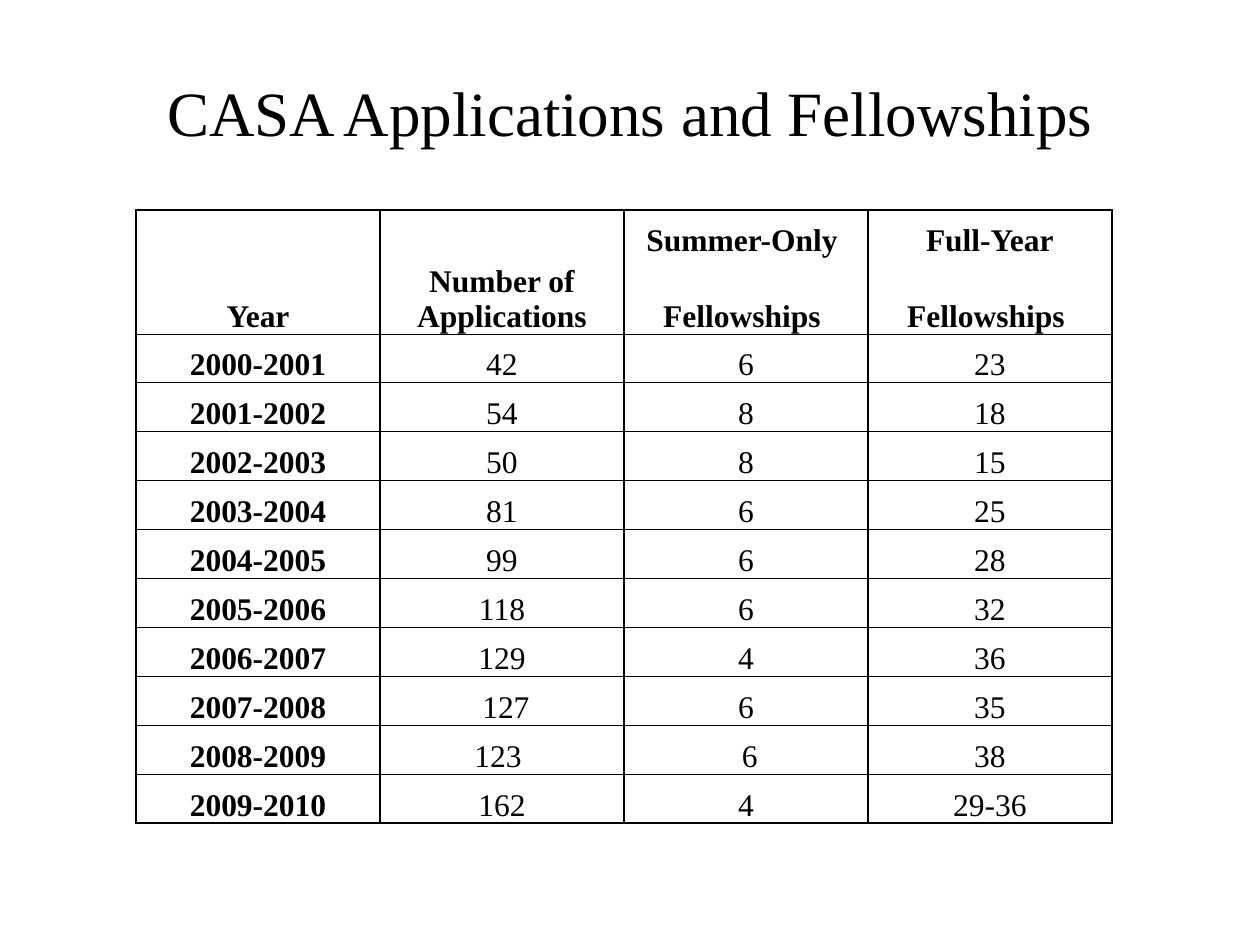
import dataclasses

import lxml.etree
import pptx
import pptx.dml.color
import pptx.enum.text
import pptx.oxml.ns
import pptx.table
import pptx.util

EMU_PER_PX = 914400 / 126
FONT = "Times New Roman"
COLORS = {"ink": "000000", "paper": "FFFFFF"}

TABLE_LEFT, TABLE_TOP = 136, 210
COLUMN_WIDTH = 244
ROW_HEIGHTS = [48, 49, 48] + [49] * 9
HEADER_ROWS = 2
CELL_INSET = 1
BORDER_POINTS = 1


@dataclasses.dataclass
class YearRecord:
    year: str
    applications: str
    summer_only: str
    full_year: str


HEADERS = [
    ("Year", "Number of Applications", "Summer-Only ", "Full-Year"),
    ("", "", "Fellowships ", "Fellowships "),
]
RECORDS = [
    YearRecord("2000-2001", "42", "6", "23"),
    YearRecord("2001-2002", "54", "8", "18"),
    YearRecord("2002-2003", "50", "8", "15"),
    YearRecord("2003-2004", "81", "6", "25"),
    YearRecord("2004-2005", "99", "6", "28"),
    YearRecord("2005-2006", "118", "6", "32"),
    YearRecord("2006-2007", "129", "4", "36"),
    YearRecord("2007-2008", " 127", "6", "35"),
    YearRecord("2008-2009", "123 ", " 6", "38"),
    YearRecord("2009-2010", "162", "4", "29-36"),
]


def px(length: int) -> pptx.util.Emu:
    return pptx.util.Emu(round(length * EMU_PER_PX))


def write_text(text_frame, text: str, points: int, bold: bool = False) -> None:
    text_frame.word_wrap = True
    text_frame.text = text
    paragraph = text_frame.paragraphs[0]
    paragraph.alignment = pptx.enum.text.PP_ALIGN.CENTER
    font = paragraph.runs[0].font if paragraph.runs else paragraph.font
    font.name = FONT
    font.size = pptx.util.Pt(points)
    font.bold = bold
    font.color.rgb = pptx.dml.color.RGBColor.from_string(COLORS["ink"])


def set_borders(cell: pptx.table._Cell, hidden_side: str) -> None:
    """Rule all four sides of a cell except the hidden one."""
    qn = pptx.oxml.ns.qn
    properties = cell._tc.get_or_add_tcPr()
    for position, side in enumerate("LRTB"):
        line = lxml.etree.Element(qn(f"a:ln{side}"), w=str(pptx.util.Pt(BORDER_POINTS)))
        if side == hidden_side:
            lxml.etree.SubElement(line, qn("a:noFill"))
        else:
            fill = lxml.etree.SubElement(line, qn("a:solidFill"))
            lxml.etree.SubElement(fill, qn("a:srgbClr"), val=COLORS["ink"])
        properties.insert(position, line)


def fill_cell(cell: pptx.table._Cell, text: str, bold: bool, hidden_side: str) -> None:
    cell.margin_left = cell.margin_right = cell.margin_top = px(CELL_INSET)
    cell.margin_bottom = 0
    cell.vertical_anchor = pptx.enum.text.MSO_ANCHOR.BOTTOM
    cell.fill.solid()
    cell.fill.fore_color.rgb = pptx.dml.color.RGBColor.from_string(COLORS["paper"])
    set_borders(cell, hidden_side)
    write_text(cell.text_frame, text, 18, bold)


def add_title(slide) -> None:
    title = slide.shapes.add_textbox(px(63), px(32), px(1134), px(158))
    title.text_frame.vertical_anchor = pptx.enum.text.MSO_ANCHOR.MIDDLE
    write_text(title.text_frame, "CASA Applications and Fellowships", 36)


def add_fellowship_table(slide) -> None:
    rows = HEADERS + [dataclasses.astuple(record) for record in RECORDS]
    column_count = len(HEADERS[0])
    table = slide.shapes.add_table(
        len(rows), column_count, px(TABLE_LEFT), px(TABLE_TOP),
        px(COLUMN_WIDTH * column_count), px(sum(ROW_HEIGHTS)),
    ).table
    table.first_row = table.horz_banding = False
    for column in table.columns:
        column.width = px(COLUMN_WIDTH)
    for row, height in zip(table.rows, ROW_HEIGHTS):
        row.height = px(height)
    for column_index in (0, 1):
        table.cell(0, column_index).merge(table.cell(1, column_index))

    open_header_sides = {0: "B", 1: "T"}
    for row_index, texts in enumerate(rows):
        for column_index, text in enumerate(texts):
            bold = row_index < HEADER_ROWS or column_index == 0
            hidden_side = open_header_sides.get(row_index, "") if column_index >= 2 else ""
            fill_cell(table.cell(row_index, column_index), text, bold, hidden_side)


def main() -> None:
    presentation = pptx.Presentation()
    presentation.slide_width = px(1260)
    presentation.slide_height = px(945)
    slide = presentation.slides.add_slide(presentation.slide_layouts[6])
    add_title(slide)
    add_fellowship_table(slide)
    presentation.save("out.pptx")


if __name__ == "__main__":
    main()
